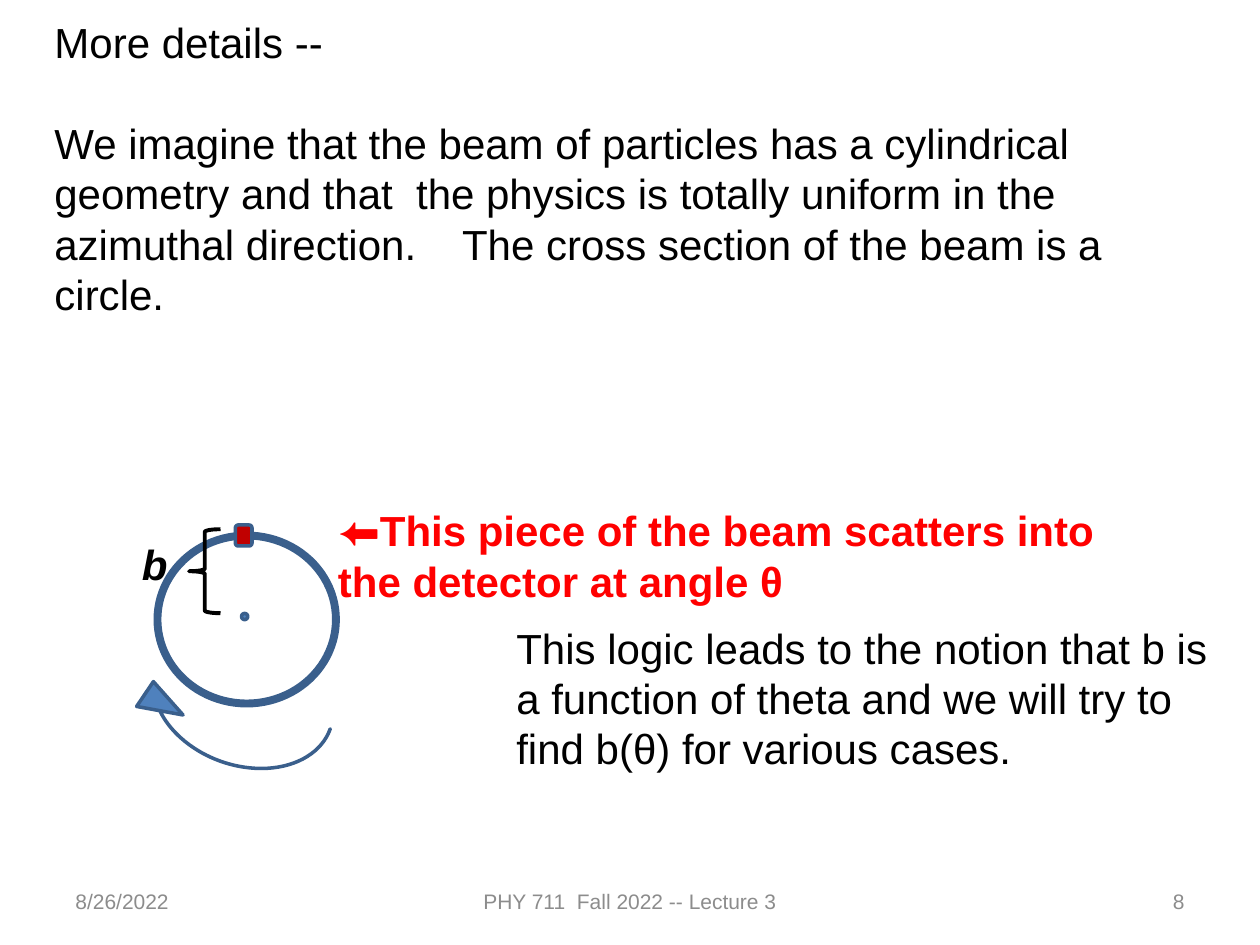
from dataclasses import dataclass
from typing import Optional

from pptx import Presentation
from pptx.dml.color import RGBColor
from pptx.enum.shapes import MSO_SHAPE
from pptx.enum.text import MSO_ANCHOR, MSO_AUTO_SIZE, PP_ALIGN
from pptx.util import Pt

OVAL = MSO_SHAPE.OVAL
ROUNDED = MSO_SHAPE.ROUNDED_RECTANGLE
BRACE = MSO_SHAPE.RIGHT_BRACE
CIRCULAR_ARROW = MSO_SHAPE.CIRCULAR_ARROW
LEFT, CENTER, RIGHT = PP_ALIGN.LEFT, PP_ALIGN.CENTER, PP_ALIGN.RIGHT
TOP, MIDDLE = MSO_ANCHOR.TOP, MSO_ANCHOR.MIDDLE
GROW, FIXED = MSO_AUTO_SIZE.SHAPE_TO_FIT_TEXT, MSO_AUTO_SIZE.NONE

FONT = "Arial"
BODY_SIZE, FOOTER_SIZE = 24, 12
LINE_PITCH = 28.8
COLORS = {
    "text": "000000",
    "footer": "8C8C8C",
    "highlight": "FF0000",
    "outline": "3A5F8C",
    "blue": "4F81BD",
    "beam piece": "C00000",
}


@dataclass
class Label:
    left: float
    top: float
    width: float
    height: float
    paragraphs: tuple[str, ...]
    color: str = "text"
    bold: bool = False
    italic: bool = False


@dataclass
class Footer:
    left: float
    width: float
    text: str
    align: PP_ALIGN


@dataclass
class Figure:
    kind: MSO_SHAPE
    left: float
    top: float
    width: float
    height: float
    line_width: float
    fill: Optional[str] = None
    line: str = "outline"
    rotation: float = 0
    adjustments: tuple[float, ...] = ()


FOOTERS = [
    Footer(36, 168, "8/26/2022", LEFT),
    Footer(246, 228, "PHY 711  Fall 2022 -- Lecture 3", CENTER),
    Footer(516, 168, "8", RIGHT),
]
INTRODUCTION = Label(24, 6, 630, 211, (
    "More details --",
    "We imagine that the beam of particles has a cylindrical geometry and that  "
    "the physics is totally uniform in the azimuthal direction.    "
    "The cross section of the beam is a circle.",
))
BEAM = [
    Figure(OVAL, 90, 306, 102, 96, 4.5),
    Figure(OVAL, 138, 350.5, 3.6, 3.6, 2, "blue"),
    Figure(ROUNDED, 134.5, 300, 9.5, 12, 2, "beam piece"),
    Figure(BRACE, 108, 302.4, 18, 48, 2.25, line="text", rotation=180),
]
NOTES = [
    Label(74, 304, 24, 36, ("b",), bold=True, italic=True),
    Label(186, 285, 456, 65.5,
          ("⬅This piece of the beam scatters into the detector at angle θ",),
          "highlight", bold=True),
    Label(288, 352, 413, 94.5,
          ("This logic leads to the notion that b is a function of theta "
           "and we will try to find b(θ) for various cases.",)),
]
ROTATION_ARROW = Figure(CIRCULAR_ARROW, 72.7, 347, 132.5, 103.7, 2, "blue",
                        rotation=199.6, adjustments=(0, 11.42, 199.05, 108, 0.13))


def rgb(name: str) -> RGBColor:
    return RGBColor.from_string(COLORS[name])


def add_box(page, left: float, top: float, width: float, height: float,
            anchor: MSO_ANCHOR, fit: MSO_AUTO_SIZE):
    box = page.shapes.add_textbox(Pt(left), Pt(top), Pt(width), Pt(height))
    frame = box.text_frame
    frame.word_wrap = True
    frame.auto_size = fit
    frame.vertical_anchor = anchor
    return frame


def add_span(para, text: str, size: float, color: str,
             bold: bool = False, italic: bool = False) -> None:
    span = para.add_run()
    span.text = text
    font = span.font
    font.name, font.size = FONT, Pt(size)
    font.bold, font.italic = bold, italic
    font.color.rgb = rgb(color)


def draw_label(page, label: Label) -> None:
    frame = add_box(page, label.left, label.top, label.width, label.height, TOP, GROW)
    for index, text in enumerate(label.paragraphs):
        para = frame.add_paragraph() if index else frame.paragraphs[0]
        para.line_spacing = Pt(LINE_PITCH)
        if index:
            para.space_before = Pt(LINE_PITCH)
        add_span(para, text, BODY_SIZE, label.color, label.bold, label.italic)


def draw_footer(page, footer: Footer) -> None:
    frame = add_box(page, footer.left, 500.5, footer.width, 28.75, MIDDLE, FIXED)
    para = frame.paragraphs[0]
    para.alignment = footer.align
    add_span(para, footer.text, FOOTER_SIZE, "footer")


def draw_figure(page, figure: Figure) -> None:
    shape = page.shapes.add_shape(figure.kind, Pt(figure.left), Pt(figure.top),
                                  Pt(figure.width), Pt(figure.height))
    shape.shadow.inherit = False
    shape.rotation = figure.rotation
    for index, value in enumerate(figure.adjustments):
        shape.adjustments[index] = value
    if figure.fill:
        shape.fill.solid()
        shape.fill.fore_color.rgb = rgb(figure.fill)
    else:
        shape.fill.background()
    shape.line.color.rgb = rgb(figure.line)
    shape.line.width = Pt(figure.line_width)


def main() -> None:
    deck = Presentation()
    deck.slide_width, deck.slide_height = Pt(720), Pt(540)
    page = deck.slides.add_slide(deck.slide_layouts[6])

    # Date, lecture title and page number
    for footer in FOOTERS:
        draw_footer(page, footer)

    # Introduction
    draw_label(page, INTRODUCTION)

    # Beam cross section with its scattering piece and impact parameter
    for figure in BEAM:
        draw_figure(page, figure)
    for label in NOTES:
        draw_label(page, label)

    # Azimuthal direction
    draw_figure(page, ROTATION_ARROW)

    deck.save("out.pptx")


if __name__ == "__main__":
    main()
